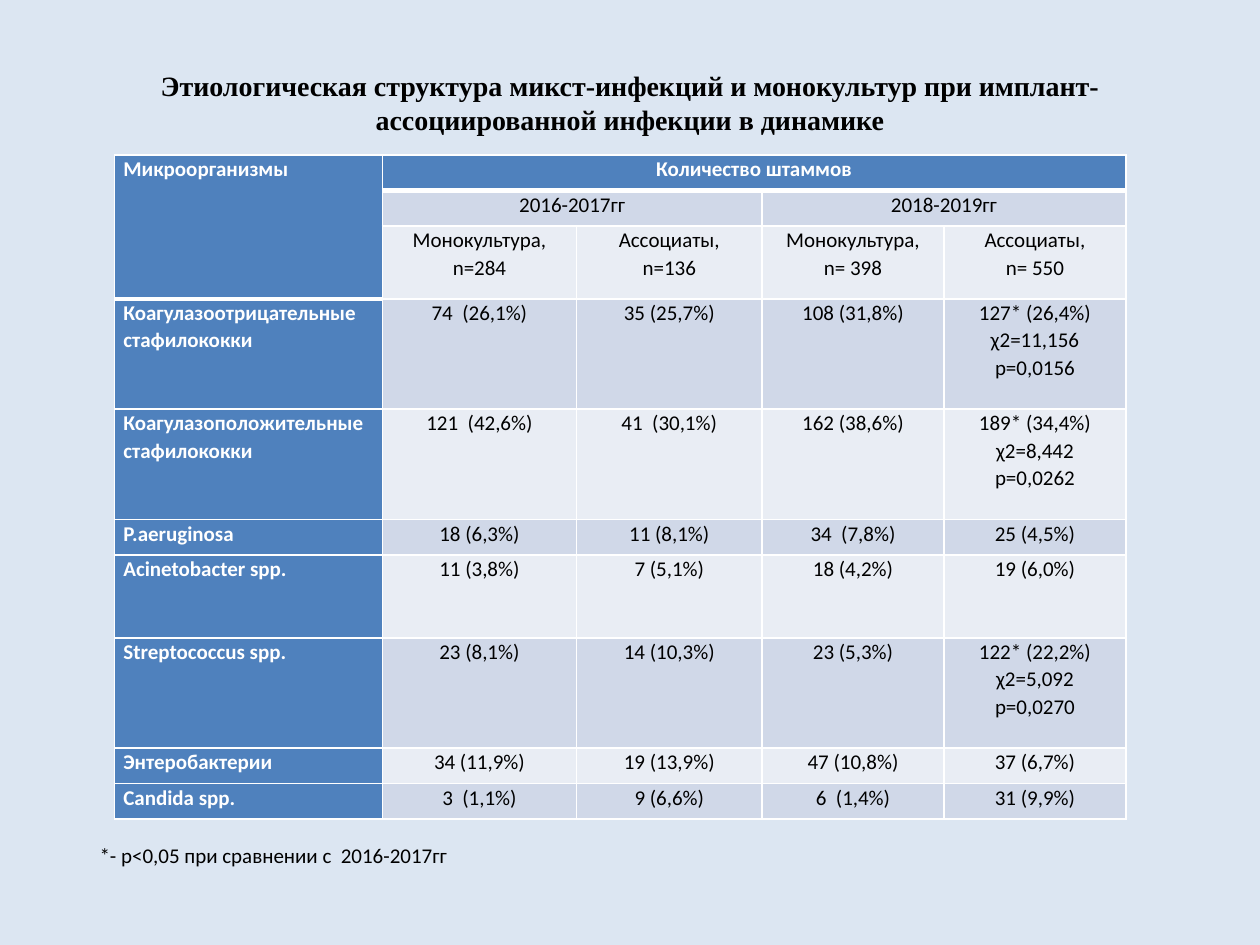
from lxml import etree
from pptx import Presentation
from pptx import util as u
from pptx.dml import color
from pptx.enum import text as t
from pptx.oxml import ns

Pt = u.Pt
BLUE, DARK, LIGHT = "4F81BD", "D0D8E8", "E9EDF4"
WHITE, BLACK = "FFFFFF", "000000"
LEFT, MID, JUST = t.PP_ALIGN.LEFT, t.PP_ALIGN.CENTER, t.PP_ALIGN.JUSTIFY

COLS = [153, 111, 106, 104, 104]
ROWS = [20.35, 20.35, 41.5, 63, 63, 20.35, 47.4, 63, 20.35, 20.35]
CELLS = [
    ["Микроорганизмы", "Количество штаммов", "", "", ""],
    ["", "2016-2017гг", "", "2018-2019гг", ""],
    ["", "Монокультура, n=284", "Ассоциаты,\nn=136",
     "Монокультура,\nn= 398", "Ассоциаты,\nn= 550"],
    ["Коагулазоотрицательные стафилококки", "74  (26,1%)", "35 (25,7%)",
     "108 (31,8%)", "127* (26,4%)\nχ2=11,156\np=0,0156"],
    ["Коагулазоположительные стафилококки", "121  (42,6%)", "41  (30,1%)",
     "162 (38,6%)", "189* (34,4%)\nχ2=8,442\np=0,0262"],
    ["P.aeruginosa", "18 (6,3%)", "11 (8,1%)", "34  (7,8%)", "25 (4,5%)"],
    ["Acinetobacter spp.", "11 (3,8%)", "7 (5,1%)", "18 (4,2%)", "19 (6,0%)"],
    ["Streptococcus spp.", "23 (8,1%)", "14 (10,3%)", "23 (5,3%)",
     "122* (22,2%)\nχ2=5,092\np=0,0270"],
    ["Энтеробактерии", "34 (11,9%)", "19 (13,9%)", "47 (10,8%)", "37 (6,7%)"],
    ["Candida spp.", "3  (1,1%)", "9 (6,6%)", "6  (1,4%)", "31 (9,9%)"],
]
SPANS = [(0, 0, 2, 0), (0, 1, 0, 4), (1, 1, 1, 2), (1, 3, 1, 4)]
THICK = {(0, 1), (0, 2), (0, 3), (0, 4), (2, 0)}


def rgb(code):
    return color.RGBColor.from_string(code)


def write(frame, words, size=12, font="Calibri", ink=BLACK, bold=False,
          align=LEFT, space=None):
    for i, line in enumerate(words.split("\n")):
        para = frame.add_paragraph() if i else frame.paragraphs[0]
        para.alignment = align
        para.line_spacing = space
        run = para.add_run()
        run.text = line
        run.font.size = Pt(size)
        run.font.name = font
        run.font.bold = bold
        run.font.color.rgb = rgb(ink)


def label(slide, box, words, left=7.2, base=3.6, **style):
    frame = slide.shapes.add_textbox(*map(Pt, box)).text_frame
    frame.word_wrap = True
    frame.vertical_anchor = t.MSO_ANCHOR.MIDDLE
    frame.margin_left, frame.margin_bottom = Pt(left), Pt(base)
    write(frame, words, **style)


def edge(cell, sides):
    props = cell._tc.get_or_add_tcPr()
    for i, (side, width) in enumerate(sides.items()):
        line = etree.Element(ns.qn("a:ln" + side), w=str(Pt(width)))
        fill = etree.SubElement(line, ns.qn("a:solidFill"))
        etree.SubElement(fill, ns.qn("a:srgbClr"), val=WHITE)
        props.insert(i, line)


def paint(cell, row, col, words):
    head = row == 0 or col == 0
    cell.fill.solid()
    cell.fill.fore_color.rgb = rgb(BLUE if head else DARK if row % 2 else LIGHT)
    cell.margin_left = cell.margin_right = Pt(5)
    cell.margin_top = cell.margin_bottom = 0
    edge(cell, {"L": 1, "R": 1,
                "T": 3 if (row - 1, col) in THICK else 1,
                "B": 3 if (row, col) in THICK else 1})
    if words:
        write(cell.text_frame, words, ink=WHITE if head else BLACK, bold=head,
              align=MID if col else JUST, space=1.07)


def grid(slide, left, top):
    box = map(Pt, (left, top, sum(COLS), sum(ROWS)))
    table = slide.shapes.add_table(len(ROWS), len(COLS), *box).table
    for col, width in zip(table.columns, COLS):
        col.width = Pt(width)
    for row, height in zip(table.rows, ROWS):
        row.height = Pt(height)
    for r, line in enumerate(CELLS):
        for c, words in enumerate(line):
            paint(table.cell(r, c), r, c, words)
    for r, c, last, end in SPANS:
        table.cell(r, c).merge(table.cell(last, end))


def main():
    deck = Presentation()
    deck.slide_width, deck.slide_height = Pt(720), Pt(540)
    slide = deck.slides.add_slide(deck.slide_layouts[6])
    slide.background.fill.solid()
    slide.background.fill.fore_color.rgb = rgb("DCE6F2")
    label(slide, (36, 21.6, 648, 90),
          "Этиологическая структура микст-инфекций и монокультур при "
          "имплант-ассоциированной инфекции в динамике",
          base=20, size=16, font="Times New Roman", bold=True, align=MID)
    grid(slide, 65.5, 88.6)
    label(slide, (14.4, 476.6, 828, 44),
          "*- p<0,05 при сравнении с  2016-2017гг", left=42.5, base=23)
    deck.save("out.pptx")


if __name__ == "__main__":
    main()
